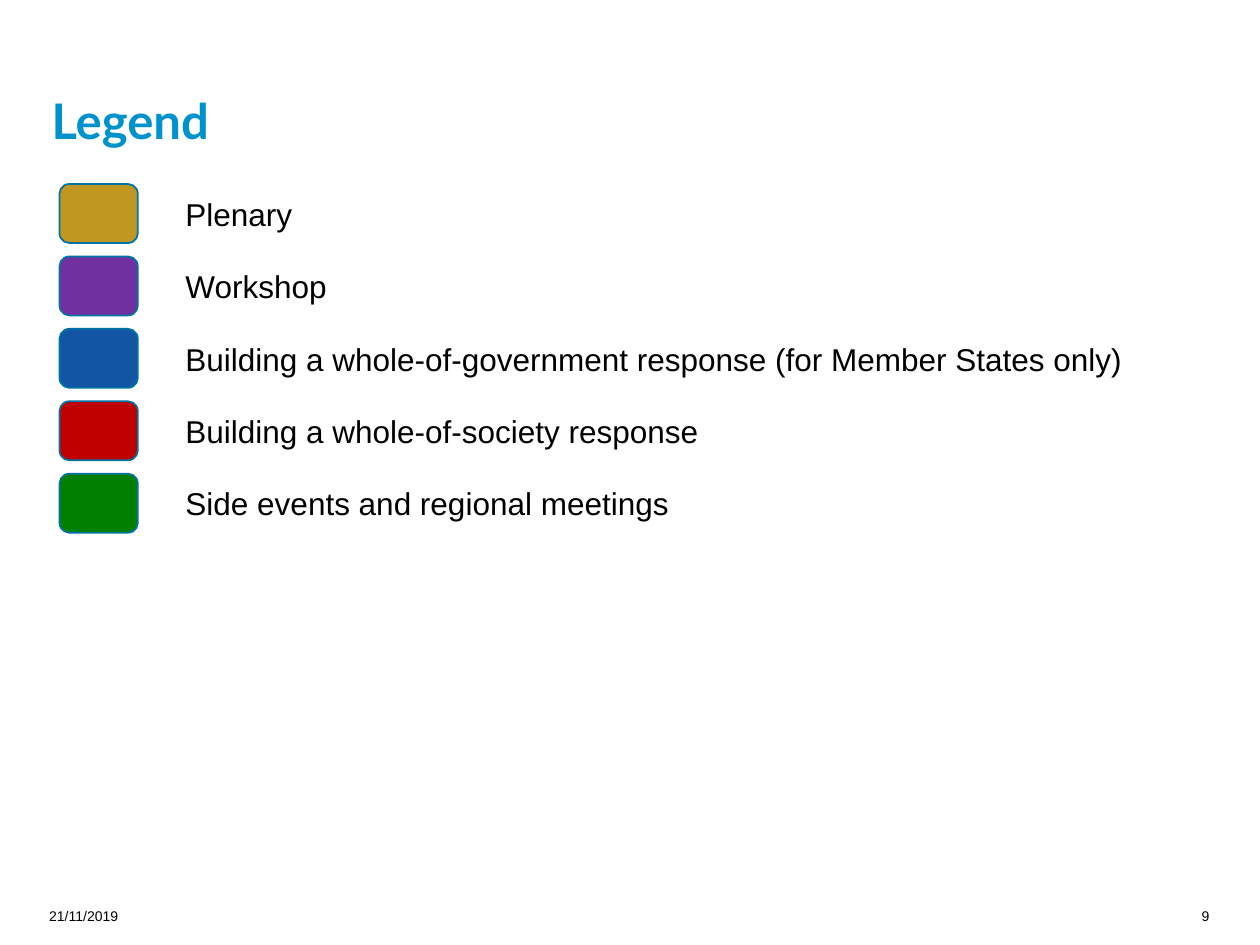
import pptx
import pptx.dml.color
import pptx.enum.shapes
import pptx.enum.text
import pptx.util
from pptx.util import Cm

COLOURS = {
    "title": "0092CC", "text": "000000", "outline": "0073A4",
    "plenary": "C09721", "workshop": "7030A0", "government": "1255A4",
    "society": "C00000", "side": "008000",
}

# Colour key, label, label width in cm
ENTRIES = [
    ("plenary", "Plenary", 2.69),
    ("workshop", "Workshop", 3.38),
    ("government", "Building a whole-of-government response "
                   "(for Member States only)", 19.58),
    ("society", "Building a whole-of-society response", 10.95),
    ("side", "Side events and regional meetings", 10.34),
]


def colour(name):
    return pptx.dml.color.RGBColor.from_string(COLOURS[name])


def style(para, size, font="Arial", tint="text", bold=False):
    para.font.name = font
    para.font.size = pptx.util.Pt(size)
    para.font.bold = bold
    para.font.color.rgb = colour(tint)


def set_margins(frame, left=0, right=0):
    frame.margin_left, frame.margin_right = Cm(left), Cm(right)
    frame.margin_top = frame.margin_bottom = 0


def add_title(page, left, top, width, height):
    title = page.shapes.title
    title.left, title.top = Cm(left), Cm(top)
    title.width, title.height = Cm(width), Cm(height)
    frame = title.text_frame
    frame.text = "Legend"
    frame.auto_size = pptx.enum.text.MSO_AUTO_SIZE.NONE
    frame.vertical_anchor = pptx.enum.text.MSO_ANCHOR.BOTTOM
    set_margins(frame, 0.05, 1)
    para = frame.paragraphs[0]
    para.alignment = pptx.enum.text.PP_ALIGN.LEFT
    para.line_spacing = 0.9
    style(para, 28, "Lato", "title", True)


def add_legend(page, left, top, pitch):
    for row, (key, label, width) in enumerate(ENTRIES):
        row_top = top + row * pitch
        # Colour swatch
        swatch = page.shapes.add_shape(
            pptx.enum.shapes.MSO_SHAPE.ROUNDED_RECTANGLE,
            Cm(left), Cm(row_top), Cm(1.58), Cm(1.19))
        swatch.shadow.inherit = False
        swatch.fill.solid()
        swatch.fill.fore_color.rgb = colour(key)
        swatch.line.color.rgb = colour("outline")
        swatch.line.width = pptx.util.Pt(1)
        # Label
        box = page.shapes.add_textbox(
            Cm(left + 2.29), Cm(row_top + 0.09), Cm(width), Cm(1.02))
        frame = box.text_frame
        frame.text = label
        frame.word_wrap = False
        frame.auto_size = pptx.enum.text.MSO_AUTO_SIZE.SHAPE_TO_FIT_TEXT
        style(frame.paragraphs[0], 18)


def add_footer(page, left, top, width, height):
    align = pptx.enum.text.PP_ALIGN
    number_width = 0.61
    parts = [
        ("21/11/2019", left, 1.65, align.LEFT),
        ("9", left + width - number_width, number_width, align.RIGHT),
    ]
    for text, part_left, part_width, alignment in parts:
        box = page.shapes.add_textbox(
            Cm(part_left), Cm(top), Cm(part_width), Cm(height))
        frame = box.text_frame
        frame.text = text
        frame.word_wrap = True
        set_margins(frame)
        frame.paragraphs[0].alignment = alignment
        style(frame.paragraphs[0], 8)


def main():
    deck = pptx.Presentation()
    deck.slide_width, deck.slide_height = Cm(25.4), Cm(19.05)
    page = deck.slides.add_slide(deck.slide_layouts.get_by_name("Title Only"))
    add_footer(page, 0.99, 18.29, 23.39, 0.51)
    add_title(page, 0.99, 1.02, 16.99, 2.01)
    add_legend(page, 1.2, 3.71, 1.46)
    deck.save("out.pptx")


if __name__ == "__main__":
    main()
